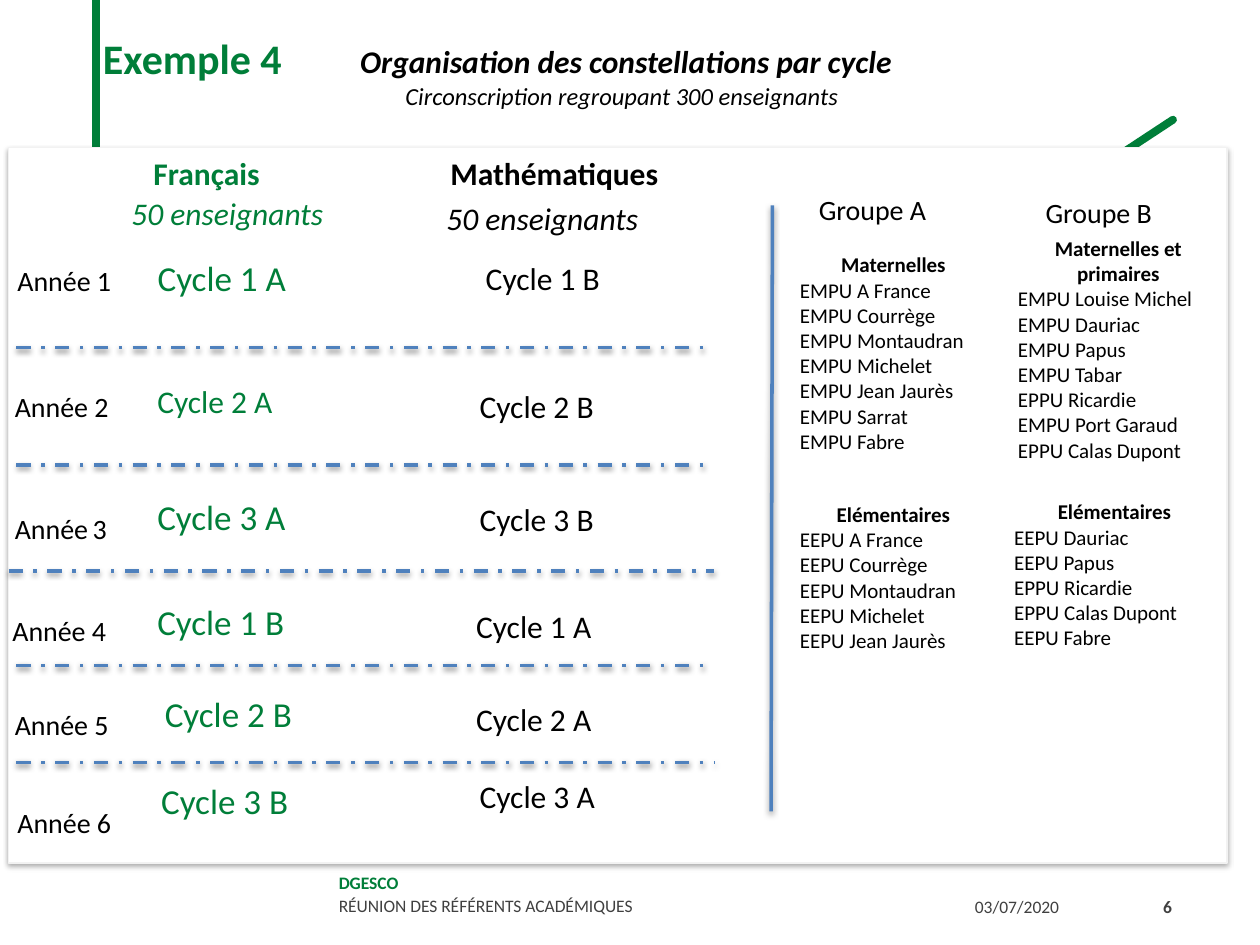
from lxml import etree
from pptx import Presentation
from pptx.dml.color import RGBColor
from pptx.enum.dml import MSO_LINE_DASH_STYLE as Dash
from pptx.enum.shapes import MSO_CONNECTOR_TYPE as Connector, MSO_SHAPE as Shape
from pptx.enum.text import MSO_ANCHOR as Anchor, MSO_AUTO_SIZE as AutoSize, PP_ALIGN as Align
from pptx.oxml.ns import qn
from pptx.util import Pt

COLORS = {
    "green": "007E39",
    "black": "000000",
    "gray": "404040",
    "blue": "4F81BD",
    "white": "FFFFFF",
    "border": "F2F2F2",
}

# Year, French cycle, mathematics cycle: each with left, top (and size for French)
YEARS = [
    (("Année 1", 2.9, 146.9), ("Cycle 1 A", 83, 143.3, 20), ("Cycle 1 B", 270.5, 144.7)),
    (("Année 2", 1.4, 218.9), ("Cycle 2 A", 82.8, 214.6, 18), ("Cycle 2 B", 267, 217.4)),
    (("Année", 1.4, 288.7), ("Cycle 3 A", 82.8, 279.4, 20), ("Cycle 3 B", 267, 282.2)),
    (("Année 4", 0, 347), ("Cycle 1 B", 82.8, 339.8, 20), ("Cycle 1 A", 265, 343.4)),
    (("Année 5", 1.4, 401), ("Cycle 2 B", 87.1, 392.4, 20), ("Cycle 2 A", 265, 396.7)),
    (("Année 6", 2.9, 456.5), ("Cycle 3 B", 85, 442.1, 20), ("Cycle 3 A", 267, 440.6)),
]

# Left, right and height of the rules between the years
SEPARATORS = [
    (9.4, 405.4, 198.7),
    (9.4, 406.8, 265.7),
    (5, 408.2, 326.2),
    (9.4, 406.8, 380.2),
    (9.4, 408.2, 435.6),
]

# Left, top, width, heading, schools
SCHOOLS = [
    (450, 140.4, 121, "Maternelles",
     ["EMPU A France", "EMPU Courrège", "EMPU Montaudran", "EMPU Michelet",
      "EMPU Jean Jaurès", "EMPU Sarrat", "EMPU Fabre"]),
    (574.6, 131, 128.9, "Maternelles et primaires",
     ["EMPU Louise Michel", "EMPU Dauriac", "EMPU Papus", "EMPU Tabar",
      "EPPU Ricardie", "EMPU Port Garaud", "EPPU Calas Dupont"]),
    (450, 283, 121, "Elémentaires",
     ["EEPU A France", "EEPU Courrège", "EEPU Montaudran", "EEPU Michelet",
      "EEPU Jean Jaurès"]),
    (572.4, 281.5, 128.9, "Elémentaires",
     ["EEPU Dauriac", "EEPU Papus", "EPPU Ricardie", "EPPU Calas Dupont", "EEPU Fabre"]),
]


def rgb(name):
    return RGBColor.from_string(COLORS[name])


def style(span, size, color="black", bold=False, italic=False):
    font = span.font
    font.name, font.size = "Calibri", Pt(size)
    font.bold, font.italic = bold, italic
    font.color.rgb = rgb(color)


def add_box(page, left, top, width, height):
    box = page.shapes.add_textbox(Pt(left), Pt(top), Pt(width), Pt(height))
    box.text_frame.word_wrap = True
    return box


def add_label(page, text, left, top, width, size, color="black", align=Align.LEFT, **looks):
    box = add_box(page, left, top, width, size * 1.22 + 7.2)
    box.text_frame.auto_size = AutoSize.SHAPE_TO_FIT_TEXT
    para = box.text_frame.paragraphs[0]
    para.text = text
    para.alignment = align
    style(para.runs[0], size, color, **looks)
    return para


def add_schools(page, left, top, width, heading, schools):
    box = add_box(page, left, top, width, 14.65 * (len(schools) + 1) + 7.2)
    frame = box.text_frame
    frame.auto_size = AutoSize.SHAPE_TO_FIT_TEXT
    frame.text = "\n".join([heading] + schools)
    for index, para in enumerate(frame.paragraphs):
        para.alignment = Align.LEFT if index else Align.CENTER
        style(para.runs[0], 12, bold=index == 0)


def add_footer(page, lines, left, top, width, height, align=Align.LEFT):
    frame = add_box(page, left, top, width, height).text_frame
    frame.vertical_anchor = Anchor.MIDDLE
    para = frame.paragraphs[0]
    para.text = "\v".join(text for text, _, _ in lines)
    para.alignment = align
    para.line_spacing = Pt(13.2)
    for span, (_, color, bold) in zip(para.runs, lines):
        style(span, 10, color, bold)


def add_effects(shape, opacity=0, distance=0):
    """Give the shape a soft shadow below it, or none when opacity is 0."""
    effects = etree.SubElement(shape._element.spPr, qn("a:effectLst"))
    if opacity:
        shadow = etree.SubElement(effects, qn("a:outerShdw"), blurRad=str(Pt(3.15)),
                                  dist=str(Pt(distance)), dir="5400000", rotWithShape="0")
        black = etree.SubElement(shadow, qn("a:srgbClr"), val=COLORS["black"])
        etree.SubElement(black, qn("a:alpha"), val=str(opacity * 1000))


def add_line(page, start, end, color="blue", width=2, dash=None, shadow=True):
    ends = [Pt(value) for value in (*start, *end)]
    line = page.shapes.add_connector(Connector.STRAIGHT, *ends)
    line.line.color.rgb = rgb(color)
    line.line.width = Pt(width)
    if dash:
        line.line.dash_style = dash
    add_effects(line, 38 if shadow else 0, 1.6)
    return line


def add_panel(page, left, top, width, height):
    panel = page.shapes.add_shape(Shape.RECTANGLE, Pt(left), Pt(top), Pt(width), Pt(height))
    panel.fill.solid()
    panel.fill.fore_color.rgb = rgb("white")
    panel.line.color.rgb = rgb("border")
    panel.line.width = Pt(0.75)
    add_effects(panel, 35, 1.8)


def main():
    deck = Presentation()
    deck.slide_width, deck.slide_height = Pt(720), Pt(540)
    page = deck.slides.add_slide(deck.slide_layouts[6])

    # Green strokes behind the panel
    for start, end in [((620, 101.5), (670.3, 68.4)), ((54.9, 101.5), (54.9, 0))]:
        stroke = add_line(page, start, end, "green", 4.5, shadow=False)
        stroke.line._get_or_add_ln().set("cap", "rnd")

    # Footer
    add_footer(page, [("DGESCO", "green", True),
                      ("RÉUNION DES RÉFÉRENTS ACADÉMIQUES", "gray", False)],
               186.5, 483.8, 363.6, 53.3)
    add_footer(page, [("03/07/2020", "gray", False)], 550, 503.3, 91.4, 28.8)
    add_footer(page, [("6", "gray", True)], 641.5, 503.3, 35.3, 28.8, Align.RIGHT)

    # Titles
    add_label(page, "Exemple 4 ", 43.9, 15.1, 137.5, 24, "green", Align.CENTER, bold=True)
    add_label(page, "Organisation des constellations par cycle", 198.7, 20.2, 433.4, 18,
              bold=True, italic=True)
    add_label(page, "Circonscription regroupant 300 enseignants", 224.6, 42.5, 301, 14,
              italic=True)

    # Panel and subject headings
    add_panel(page, 5, 84.2, 696.2, 409)
    for subject, color, left, count_left, count_top in [
            ("Français", "green", -61.9, 43.2, 107.3),
            ("Mathématiques", "black", 136.8, 223.2, 110.2)]:
        add_label(page, subject, left, 84.2, 360, 18, color, Align.CENTER, bold=True)
        add_label(page, "50 enseignants", count_left, count_top, 173.5, 18, color,
                  Align.CENTER, italic=True)

    # Cycles year by year
    for year, french, maths in YEARS:
        para = add_label(page, *year, 71.3, 16)
        if year[0] == "Année":  # narrower gap before the number
            for text, size in [(" ", 11), ("3", 16)]:
                span = para.add_run()
                span.text = text
                style(span, size)
        add_label(page, *french[:3], 141.8, french[3], "green")
        add_label(page, *maths, 141.8, 18)
    for left, right, height in SEPARATORS:
        add_line(page, (left, height), (right, height), dash=Dash.DASH_DOT)

    # School groups
    add_line(page, (441.4, 117.4), (440.6, 463.7))
    add_label(page, "Groupe A", 460.8, 106.6, 92.9, 16)
    add_label(page, "Groupe B", 590.4, 108, 92.9, 16)
    for group in SCHOOLS:
        add_schools(page, *group)

    deck.save("out.pptx")


if __name__ == "__main__":
    main()
